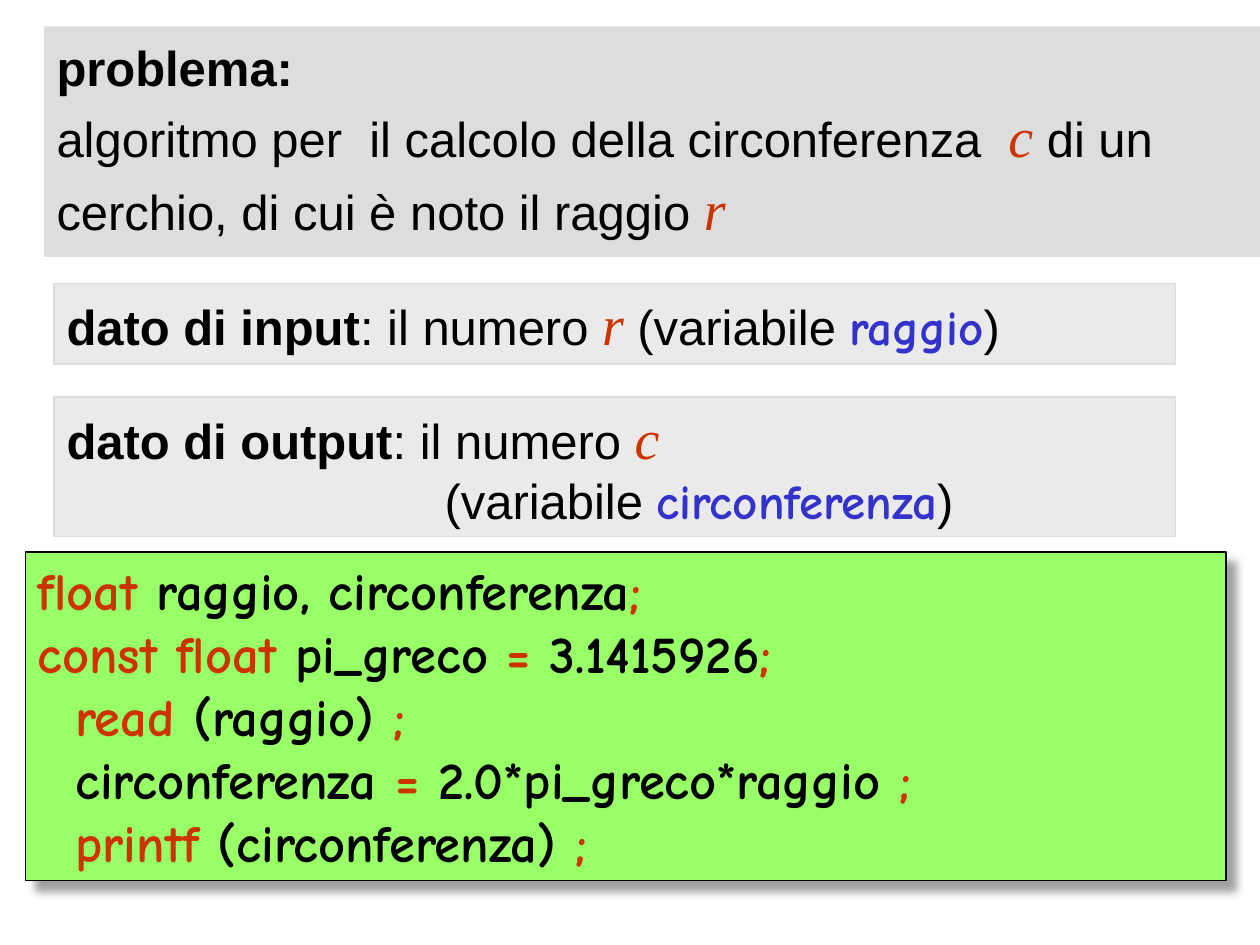
from lxml.etree import SubElement
from pptx import Presentation
from pptx.dml.color import RGBColor
from pptx.enum.shapes import MSO_SHAPE
from pptx.enum.text import MSO_ANCHOR, PP_ALIGN
from pptx.oxml.ns import qn
from pptx.util import Inches, Pt


def tint(code):
    return RGBColor.from_string(code)


BODY = dict(name="Arial", size=Pt(28), bold=False, italic=False, color="000000")
HEAD = BODY | dict(bold=True)
MATH = BODY | dict(name="Times New Roman", size=Pt(32), italic=True, color="CC3300")
NAME = HEAD | dict(name="Comic Neue", color="3333CC")
CODE = NAME | dict(size=Pt(30), color="000000")
WORD = CODE | dict(color="CC3300")


class Deck:
    """Holds the style and the current slide of the deck."""

    def __init__(self, wide, high):
        self.deck = Presentation()
        self.deck.slide_width, self.deck.slide_height = Inches(wide), Inches(high)
        self.slide = self.deck.slides.add_slide(self.deck.slide_layouts[6])

    def panel(self, left, top, wide, high, fill, line=None):
        w, h = self.deck.slide_width, self.deck.slide_height
        place = [round(part) for part in (left * w, top * h, wide * w, high * h)]
        box = self.slide.shapes.add_shape(MSO_SHAPE.RECTANGLE, *place)
        box.shadow.inherit = False
        box.fill.solid()
        box.fill.fore_color.rgb = tint(fill)
        if line:
            box.line.color.rgb = tint(line)
            box.line.width = Pt(0.75)
        else:
            box.line.fill.background()
        box.text_frame.word_wrap = True
        box.text_frame.vertical_anchor = MSO_ANCHOR.TOP
        return box

    def text(self, box, rows, **form):
        frame = box.text_frame
        for i, (dent, runs) in enumerate(rows):
            para = frame.add_paragraph() if i else frame.paragraphs[0]
            para.alignment = PP_ALIGN.LEFT
            para.line_spacing = form.get("pitch")
            para.space_before = Pt(0 if i else form.get("lead", 0))
            if dent:
                para._p.get_or_add_pPr().set("marL", str(Inches(dent)))
            for words, style in runs:
                run = para.add_run()
                run.text = words
                for key, value in style.items():
                    if key == "color":
                        run.font.color.rgb = tint(value)
                    else:
                        setattr(run.font, key, value)

    def shade(self, box, color, alpha, blur, dist, angle):
        list_ = box._element.spPr.find(qn("a:effectLst"))
        outer = SubElement(list_, qn("a:outerShdw"), blurRad=str(Pt(blur)),
                           dist=str(Pt(dist)), dir=str(angle * 60000),
                           algn="tl", rotWithShape="0")
        hue = SubElement(outer, qn("a:srgbClr"), val=color)
        SubElement(hue, qn("a:alpha"), val=str(alpha * 1000))

    def save(self):
        self.deck.save("out.pptx")


def main():
    deck = Deck(10, 7.5)

    task = deck.panel(0.035, 0.21 / 7.5, 0.965, 1.83 / 7.5, "DDDDDD")
    deck.text(task, [
        (0, [("problema:", HEAD)]),
        (0, [("algoritmo per  il calcolo della circonferenza  ", BODY), ("c", MATH),
             (" di un cerchio, di cui è noto il raggio ", BODY), ("r", MATH)]),
    ], pitch=1.08)

    code = deck.panel(0.02, 4.38 / 7.5, 0.953, 2.61 / 7.5, "99FF66", "000000")
    deck.shade(code, "808080", 75, 5, 8.5, 45)
    deck.text(code, [
        (0, [("float", WORD), (" raggio, circonferenza", CODE), (";", WORD)]),
        (0, [("const float ", WORD), ("pi_greco ", CODE), ("=", WORD),
             (" 3.1415926", CODE), (";", WORD)]),
        (0.3, [("read", WORD), (" (raggio)", CODE), (" ;", WORD)]),
        (0.3, [("circonferenza ", CODE), ("= ", WORD),
               ("2.0*pi_greco*raggio", CODE), (" ;", WORD)]),
        (0.3, [("printf", WORD), (" (circonferenza)", CODE), (" ;", WORD)]),
    ], pitch=Pt(36))

    data = [
        (2.25, 0.64, [
            (0, [("dato di input", HEAD), (": il numero ", BODY), ("r", MATH),
                 (" (variabile ", BODY), ("raggio", NAME), (")", BODY)])]),
        (3.15, 1.11, [
            (0, [("dato di output", HEAD), (": il numero ", BODY), ("c", MATH)]),
            (3, [("(variabile ", BODY), ("circonferenza", NAME), (")", BODY)])]),
    ]
    for top, high, rows in data:
        box = deck.panel(0.043, top / 7.5, 0.89, high / 7.5, "EAEAEA", "DDDDDD")
        deck.text(box, rows, lead=4)

    deck.save()


if __name__ == "__main__":
    main()
